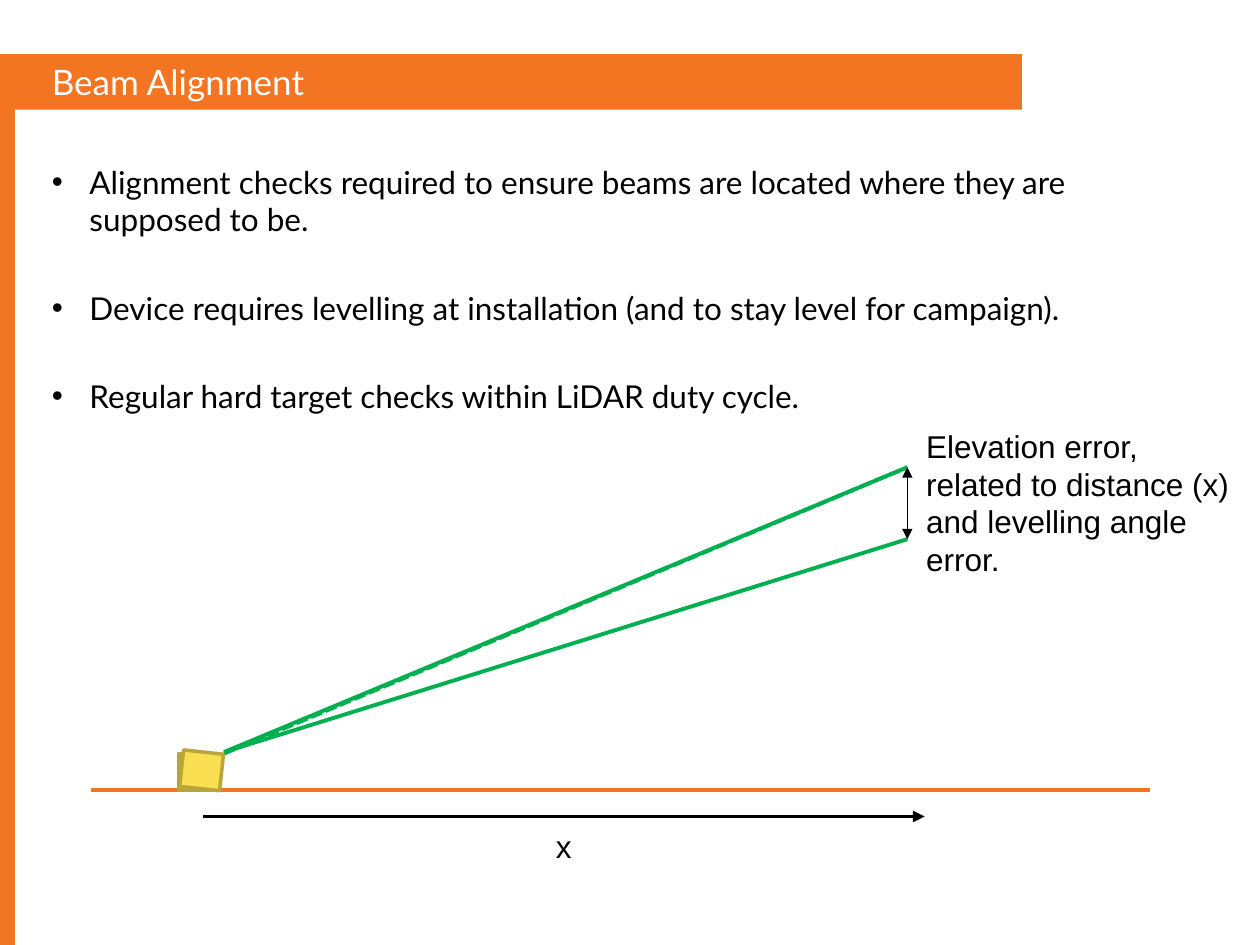
from dataclasses import dataclass

from lxml import etree
from pptx import Presentation
from pptx import util as u
from pptx.dml.color import RGBColor
from pptx.enum import dml, shapes, text
from pptx.oxml.ns import qn


@dataclass(frozen=True)
class Theme:
    orange: str = "F37421"
    green: str = "00B050"
    yellow: str = "FBDF53"
    olive: str = "BAA53D"
    black: str = "000000"
    white: str = "FFFFFF"
    heading_font: str = "Lato"
    label_font: str = "Arial"
    title_size: float = 20
    text_size: float = 18
    bullet_gap: float = 28.8
    thick: float = 2.25
    outline: float = 2
    thin: float = 0.75


class SlideBuilder:
    def __init__(self, slide, theme):
        self.slide = slide
        self.theme = theme

    def place(self, shape, left, top, width, height):
        shape.left, shape.top = u.Cm(left), u.Cm(top)
        shape.width, shape.height = u.Cm(width), u.Cm(height)

    def style(self, paragraph, font, size, color):
        paragraph.font.name = font
        paragraph.font.size = u.Pt(size)
        paragraph.font.color.rgb = RGBColor.from_string(color)

    def title(self, words, *box):
        shape = self.slide.shapes.title
        self.place(shape, *box)
        frame = shape.text_frame
        frame.text = words
        frame.auto_size = text.MSO_AUTO_SIZE.NONE
        frame.vertical_anchor = text.MSO_ANCHOR.MIDDLE
        paragraph = frame.paragraphs[0]
        paragraph.alignment = text.PP_ALIGN.LEFT
        self.style(paragraph, self.theme.heading_font, self.theme.title_size, self.theme.white)

    def bullets(self, items, *box):
        shape = self.slide.placeholders[1]
        self.place(shape, *box)
        frame = shape.text_frame
        frame.text = "\n".join(items)
        frame.auto_size = text.MSO_AUTO_SIZE.NONE
        indent = u.Cm(0.76)
        for index, paragraph in enumerate(frame.paragraphs):
            properties = paragraph._p.get_or_add_pPr()
            properties.set("marL", str(indent))
            properties.set("indent", str(-indent))
            etree.SubElement(properties, qn("a:buChar"), char="•")
            paragraph.space_before = u.Pt(self.theme.bullet_gap if index else 0)
            self.style(paragraph, self.theme.heading_font, self.theme.text_size, self.theme.black)

    def rectangle(self, box, fill, outline=None, rotation=0):
        left, top, width, height = map(u.Cm, box)
        shape = self.slide.shapes.add_shape(
            shapes.MSO_SHAPE.RECTANGLE, left, top, width, height)
        shape.shadow.inherit = False
        shape.rotation = rotation
        shape.fill.solid()
        shape.fill.fore_color.rgb = RGBColor.from_string(fill)
        if outline:
            shape.line.color.rgb = RGBColor.from_string(outline)
            shape.line.width = u.Pt(self.theme.outline)
        else:
            shape.line.fill.background()
        return shape

    def band(self, *box):
        """Add an orange band behind the title."""
        shape = self.rectangle(box, self.theme.orange)
        self.slide.shapes.title.element.addprevious(shape.element)

    def line(self, start, end, color, width, dash=None, arrows=()):
        connector = self.slide.shapes.add_connector(
            shapes.MSO_CONNECTOR.STRAIGHT, *map(u.Cm, (*start, *end)))
        connector.line.color.rgb = RGBColor.from_string(color)
        connector.line.width = u.Pt(width)
        if dash:
            connector.line.dash_style = dash
        outline = connector.line._get_or_add_ln()
        for arrow in arrows:
            etree.SubElement(outline, qn(f"a:{arrow}"), type="triangle")
        etree.SubElement(connector.element.spPr, qn("a:effectLst"))

    def label(self, words, *box, align=text.PP_ALIGN.LEFT):
        shape = self.slide.shapes.add_textbox(*map(u.Cm, box))
        frame = shape.text_frame
        frame.word_wrap = True
        frame.text = words
        paragraph = frame.paragraphs[0]
        paragraph.alignment = align
        self.style(paragraph, self.theme.label_font, self.theme.text_size, self.theme.black)


def main():
    presentation = Presentation()
    presentation.slide_width, presentation.slide_height = u.Cm(25.4), u.Cm(19.05)
    slide = presentation.slides.add_slide(presentation.slide_layouts[1])
    theme = Theme()
    builder = SlideBuilder(slide, theme)

    # Orange frame, title and bullets
    builder.band(0, 1.09, 20.6, 1.12)
    builder.band(0, 2.03, 0.3, 17.02)
    builder.title("Beam Alignment", 0.79, 1.19, 15.37, 0.89)
    builder.bullets([
        "Alignment checks required to ensure beams are located where they are supposed to be.",
        "Device requires levelling at installation (and to stay level for campaign).",
        "Regular hard target checks within LiDAR duty cycle.",
    ], 0.79, 3.15, 22.45, 12.83)

    # Ground, level device and tilted device
    source = (4.52, 15.16)
    tilted_end, level_end = (18.29, 9.42), (18.29, 10.87)
    builder.line((4.52, 15.19), tilted_end, theme.green, theme.thick,
                 dash=dml.MSO_LINE.SQUARE_DOT)
    builder.line((1.83, 15.93), (23.19, 15.93), theme.orange, theme.thick)
    builder.rectangle((3.61, 15.19, 0.81, 0.74), theme.yellow, theme.olive)
    builder.rectangle((3.66, 15.16, 0.81, 0.74), theme.yellow, theme.olive, rotation=6.1)

    # Beams and the elevation error between them
    for beam_end in (tilted_end, level_end):
        builder.line(source, beam_end, theme.green, theme.thick)
    builder.line(tilted_end, level_end, theme.black, theme.thin,
                 arrows=("headEnd", "tailEnd"))
    builder.label("Elevation error, related to distance (x) and levelling angle error.",
                  18.42, 8.48, 6.76, 3.33)

    # Distance arrow
    builder.line((4.09, 16.46), (18.64, 16.46), theme.black, theme.thick,
                 arrows=("tailEnd",))
    builder.label("x", 9.7, 16.54, 3.33, 1.02, align=text.PP_ALIGN.CENTER)

    presentation.save("out.pptx")


if __name__ == "__main__":
    main()
